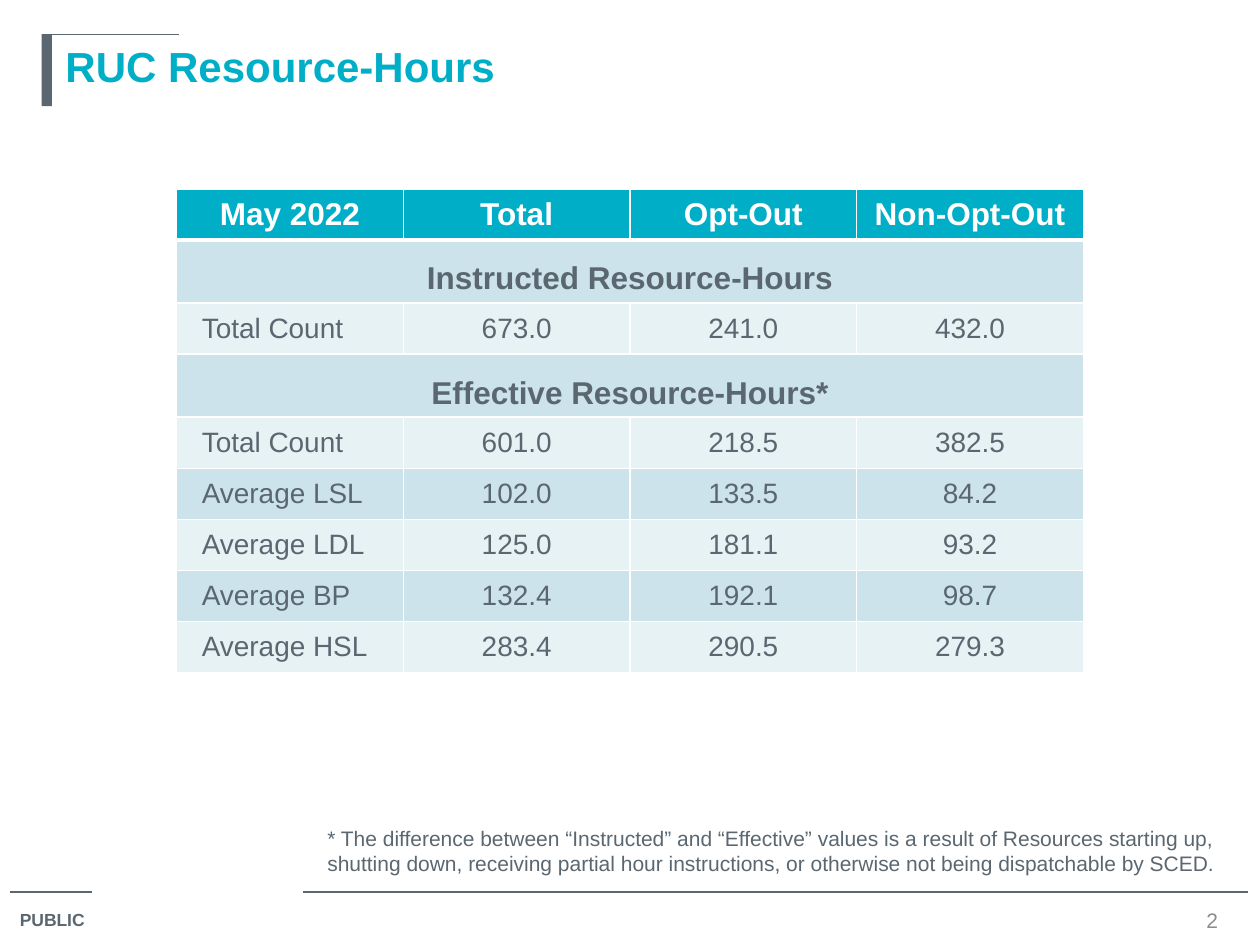
from dataclasses import dataclass

import lxml.etree
import pptx
import pptx.dml.color
import pptx.enum.shapes
import pptx.enum.text
import pptx.oxml.ns
import pptx.util

Cm = pptx.util.Cm
Pt = pptx.util.Pt
qn = pptx.oxml.ns.qn
ALIGN = pptx.enum.text.PP_ALIGN
ANCHOR = pptx.enum.text.MSO_ANCHOR


@dataclass(frozen=True)
class Theme:
    font: str = "Arial"
    accent: str = "00AEC7"
    slate: str = "5B6770"
    gray: str = "8C8C8C"
    white: str = "FFFFFF"
    band_dark: str = "CCE3EB"
    band_light: str = "E7F2F5"
    title: int = 24
    heading: int = 18
    body: int = 16
    note: int = 12
    label: int = 10
    rule: float = 0.75
    border: int = 1
    header_border: int = 3


THEME = Theme()


@dataclass(frozen=True)
class Style:
    size: int
    color: str
    bold: bool = False
    align: ALIGN = ALIGN.LEFT
    anchor: ANCHOR = ANCHOR.TOP


@dataclass(frozen=True)
class TextBox:
    text: str
    left: float
    top: float
    width: float
    height: float
    style: Style


@dataclass(frozen=True)
class Rule:
    left: float
    right: float
    y: float


@dataclass(frozen=True)
class Row:
    texts: tuple[str, ...]
    height: float = 1.03

    @property
    def is_section(self) -> bool:
        return len(self.texts) == 1


HEADER = Style(THEME.heading, THEME.white, True, ALIGN.CENTER, ANCHOR.MIDDLE)
SECTION = Style(THEME.heading, THEME.slate, True, ALIGN.CENTER, ANCHOR.BOTTOM)
LABEL = Style(THEME.body, THEME.slate, anchor=ANCHOR.MIDDLE)
VALUE = Style(THEME.body, THEME.slate, align=ALIGN.CENTER, anchor=ANCHOR.MIDDLE)

RULES = [Rule(0.2, 1.85, 17.98), Rule(6.1, 25.15, 17.98), Rule(0.84, 3.61, 0.69)]

TEXTS = [
    TextBox("PUBLIC", 0.15, 18.21, 1.96, 0.71,
            Style(THEME.label, THEME.slate, True)),
    TextBox("RUC Resource-Hours", 1.07, 0.69, 23.5, 1.45,
            Style(THEME.title, THEME.accent, True)),
    TextBox("2", 23.7, 18.24, 1.47, 0.61,
            Style(THEME.note, THEME.gray, False, ALIGN.CENTER, ANCHOR.MIDDLE)),
    TextBox("* The difference between “Instructed” and “Effective” values is a "
            "result of Resources starting up, shutting down, receiving partial "
            "hour instructions, or otherwise not being dispatchable by SCED.",
            6.35, 16.51, 18.42, 1.27, Style(THEME.note, THEME.slate)),
]

ROWS = [
    Row(("May 2022", "Total", "Opt-Out", "Non-Opt-Out")),
    Row(("Instructed Resource-Hours",), 1.27),
    Row(("Total Count", "673.0", "241.0", "432.0")),
    Row(("Effective Resource-Hours*",), 1.27),
    Row(("Total Count", "601.0", "218.5", "382.5")),
    Row(("Average LSL", "102.0", "133.5", "84.2")),
    Row(("Average LDL", "125.0", "181.1", "93.2")),
    Row(("Average BP", "132.4", "192.1", "98.7")),
    Row(("Average HSL", "283.4", "290.5", "279.3")),
]


def rgb(color: str) -> pptx.dml.color.RGBColor:
    return pptx.dml.color.RGBColor.from_string(color)


def write(tf, text: str, style: Style) -> None:
    p = tf.paragraphs[0]
    p.alignment = style.align
    r = p.add_run()
    r.text = text
    r.font.name = THEME.font
    r.font.size = Pt(style.size)
    r.font.bold = style.bold
    r.font.color.rgb = rgb(style.color)


def add_text(s, box: TextBox) -> None:
    sp = s.shapes.add_textbox(Cm(box.left), Cm(box.top), Cm(box.width), Cm(box.height))
    tf = sp.text_frame
    tf.word_wrap = True
    tf.vertical_anchor = box.style.anchor
    write(tf, box.text, box.style)


def add_rule(s, rule: Rule) -> None:
    cx = s.shapes.add_connector(pptx.enum.shapes.MSO_CONNECTOR.STRAIGHT,
                                Cm(rule.left), Cm(rule.y), Cm(rule.right), Cm(rule.y))
    cx.line.color.rgb = rgb(THEME.slate)
    cx.line.width = Pt(THEME.rule)
    lxml.etree.SubElement(cx._element.spPr, qn("a:effectLst"))


def add_title_bar(s) -> None:
    sp = s.shapes.add_shape(pptx.enum.shapes.MSO_SHAPE.RECTANGLE,
                            Cm(0.84), Cm(0.69), Cm(0.21), Cm(1.45))
    sp.shadow.inherit = False
    sp.fill.solid()
    sp.fill.fore_color.rgb = rgb(THEME.slate)
    sp.line.fill.background()


def set_borders(cell, top: float, bottom: float) -> None:
    tc_pr = cell._tc.get_or_add_tcPr()
    widths = {"lnL": THEME.border, "lnR": THEME.border, "lnT": top, "lnB": bottom}
    for i, (tag, width) in enumerate(widths.items()):
        ln = lxml.etree.Element(qn(f"a:{tag}"), w=str(Pt(width)))
        fill = lxml.etree.SubElement(ln, qn("a:solidFill"))
        lxml.etree.SubElement(fill, qn("a:srgbClr"), val=THEME.white)
        tc_pr.insert(i, ln)


def cell_style(row: int, col: int) -> Style:
    if row == 0:
        return HEADER
    if ROWS[row].is_section:
        return SECTION
    return LABEL if col == 0 else VALUE


def format_cell(cell, row: int, col: int) -> None:
    style = cell_style(row, col)
    cell.margin_left = Cm(0.51 if style is LABEL else 0)
    cell.margin_right = cell.margin_top = Cm(0)
    cell.margin_bottom = Cm(0.13 if style is SECTION else 0)
    cell.vertical_anchor = style.anchor
    band = THEME.band_dark if row % 2 else THEME.band_light
    cell.fill.solid()
    cell.fill.fore_color.rgb = rgb(band if row else THEME.accent)
    set_borders(cell, THEME.header_border if row == 1 else THEME.border,
                THEME.header_border if row == 0 else THEME.border)
    if col < len(ROWS[row].texts):
        write(cell.text_frame, ROWS[row].texts[col], style)


def add_hours_table(s) -> None:
    n_cols = len(ROWS[0].texts)
    col_width = 4.57
    height = sum(row.height for row in ROWS)
    table = s.shapes.add_table(len(ROWS), n_cols, Cm(3.56), Cm(3.81),
                               Cm(col_width * n_cols), Cm(height)).table
    table.first_row = table.horz_banding = False
    for column in table.columns:
        column.width = Cm(col_width)
    for i, row in enumerate(ROWS):
        table.rows[i].height = Cm(row.height)
        for j in range(n_cols):
            format_cell(table.cell(i, j), i, j)
        if row.is_section:
            table.cell(i, 0).merge(table.cell(i, n_cols - 1))


def main() -> None:
    prs = pptx.Presentation()
    prs.slide_width, prs.slide_height = Cm(25.4), Cm(19.05)
    s = prs.slides.add_slide(prs.slide_layouts[6])
    add_title_bar(s)
    for rule in RULES:
        add_rule(s, rule)
    for box in TEXTS:
        add_text(s, box)
    add_hours_table(s)
    prs.save("out.pptx")


if __name__ == "__main__":
    main()
